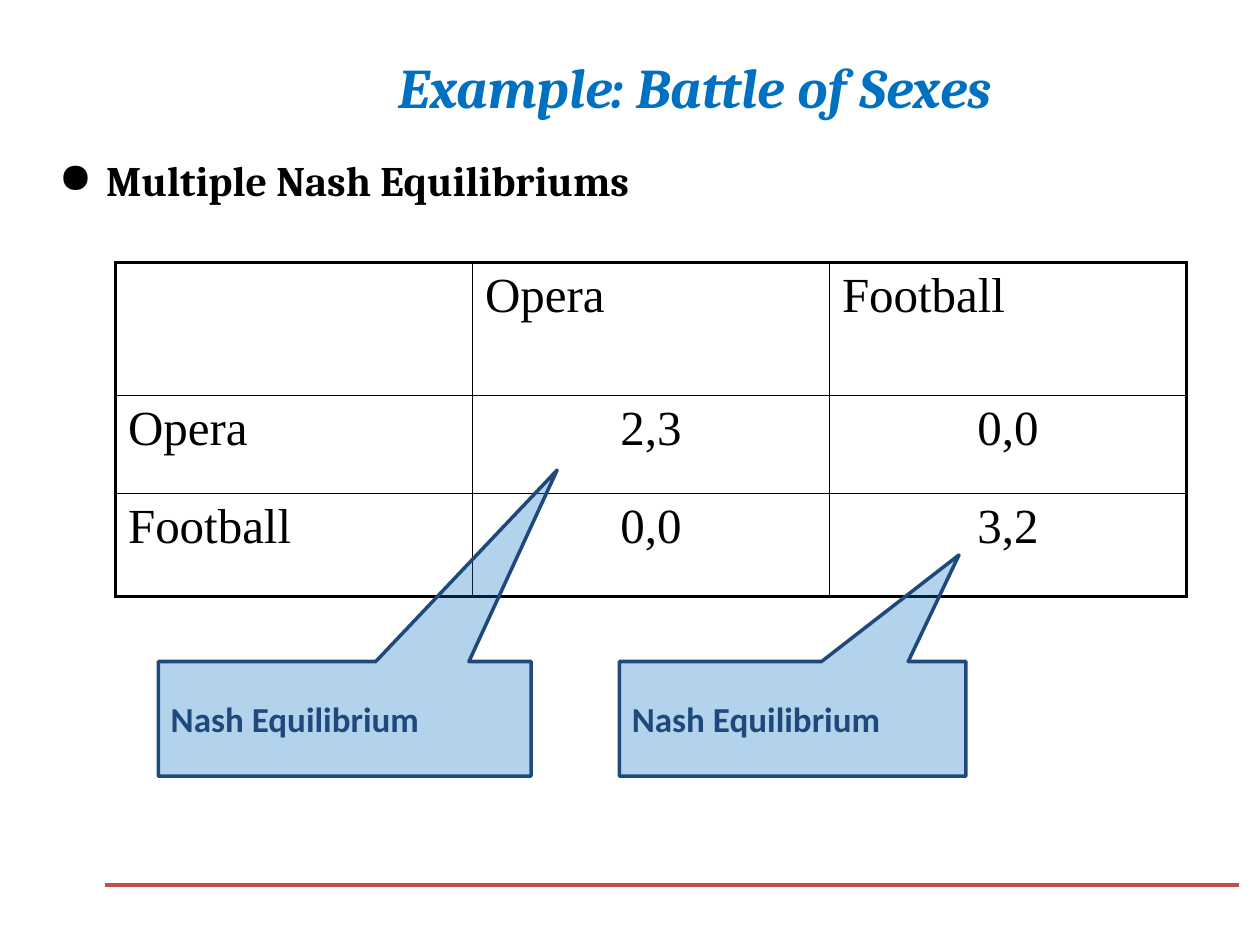
import pptx
import pptx.dml.color
import pptx.enum.shapes
import pptx.enum.text
import pptx.oxml
import pptx.oxml.ns
import pptx.util
from dataclasses import dataclass

Pt = pptx.util.Pt
qn = pptx.oxml.ns.qn
ALIGN = pptx.enum.text.PP_ALIGN
ANCHOR = pptx.enum.text.MSO_ANCHOR


@dataclass(frozen=True)
class Theme:
    blue: str = "0070C0"
    navy: str = "1F497D"
    black: str = "000000"
    red: str = "C0504D"
    heading_font: str = "Cambria"
    table_font: str = "Times New Roman"
    label_font: str = "Calibri"
    title_size: int = 32
    bullet_size: int = 24
    table_size: int = 28
    label_size: int = 20


THEME = Theme()


def rgb(value):
    return pptx.dml.color.RGBColor.from_string(value)


def child(parent, tag, **attrs):
    el = parent.makeelement(qn(tag), attrs)
    parent.append(el)
    return el


def write(tf, text, size, font, color, bold=False, italic=False,
          align=ALIGN.LEFT, spacing=None):
    p = tf.paragraphs[0]
    p.alignment = align
    if spacing:
        p.line_spacing = spacing
    r = p.add_run()
    r.text = text
    r.font.size, r.font.name = Pt(size), font
    r.font.bold, r.font.italic = bold, italic
    r.font.color.rgb = rgb(color)
    return p


def add_text(s, x, y, w, h, text, wrap=True, anchor=ANCHOR.TOP, **fmt):
    tf = s.shapes.add_textbox(Pt(x), Pt(y), Pt(w), Pt(h)).text_frame
    tf.word_wrap = wrap
    tf.vertical_anchor = anchor
    return write(tf, text, **fmt)


def add_bullet(p, char, indent):
    pPr = p._p.get_or_add_pPr()
    pPr.set("marL", str(Pt(indent)))
    pPr.set("indent", str(-Pt(indent)))
    child(pPr, "a:buChar", char=char)


def add_rule(s, x1, x2, y):
    line = s.shapes.add_connector(
        pptx.enum.shapes.MSO_CONNECTOR.STRAIGHT, Pt(x1), Pt(y), Pt(x2), Pt(y))
    line.line.color.rgb = rgb(THEME.red)
    line.line.width = Pt(2.25)
    child(line._element.spPr, "a:effectLst")


def set_borders(cell, widths):
    tcPr = cell._tc.get_or_add_tcPr()
    for side, width in zip("LRTB", widths):
        ln = child(tcPr, f"a:ln{side}", w=str(Pt(width)))
        child(child(ln, "a:solidFill"), "a:srgbClr", val=THEME.black)


def add_payoffs(s, x, y, col_width, heights, rows):
    last_row, last_col = len(rows) - 1, len(rows[0]) - 1
    tbl = s.shapes.add_table(
        len(rows), len(rows[0]), Pt(x), Pt(y),
        Pt(col_width * len(rows[0])), Pt(sum(heights))).table
    tbl.first_row = tbl.horz_banding = False
    for col in tbl.columns:
        col.width = Pt(col_width)
    for i, values in enumerate(rows):
        tbl.rows[i].height = Pt(heights[i])
        for j, text in enumerate(values):
            cell = tbl.cell(i, j)
            outer = (j == 0, j == last_col, i == 0, i == last_row)
            set_borders(cell, [2.25 if edge else 1 for edge in outer])
            cell.fill.background()
            if text:
                write(cell.text_frame, text, THEME.table_size,
                      THEME.table_font, THEME.black,
                      align=ALIGN.CENTER if i and j else ALIGN.LEFT)


def add_callout(s, x, y, w, h, text, tip):
    sp = s.shapes.add_shape(
        pptx.enum.shapes.MSO_SHAPE.RECTANGULAR_CALLOUT,
        Pt(x), Pt(y), Pt(w), Pt(h))
    sp.adjustments[0], sp.adjustments[1] = tip
    sp.shadow.inherit = False
    sp.fill.solid()
    sp.fill.fore_color.rgb = rgb(THEME.blue)
    color = sp._element.spPr.find(qn("a:solidFill"))[0]
    child(color, "a:alpha", val="30000")
    sp.line.color.rgb = rgb(THEME.navy)
    sp.line.width = Pt(2)
    sp.text_frame.word_wrap = True
    sp.text_frame.vertical_anchor = ANCHOR.MIDDLE
    write(sp.text_frame, text, THEME.label_size, THEME.label_font,
          THEME.navy, bold=True)


def main():
    prs = pptx.Presentation()
    prs.slide_width, prs.slide_height = Pt(720), Pt(540)
    s = prs.slides.add_slide(prs.slide_layouts[6])

    add_rule(s, 60, 708, 505.5)
    add_text(s, 90.5, 16.5, 613.5, 55.5, "Example: Battle of Sexes",
             anchor=ANCHOR.BOTTOM, size=THEME.title_size,
             font=THEME.heading_font, color=THEME.blue, bold=True,
             italic=True, align=ALIGN.CENTER, spacing=0.85)
    add_payoffs(s, 66, 150, 204, [76, 56, 59], [
        ["", "Opera", "Football"],
        ["Opera", "2,3", "0,0"],
        ["Football", "0,0", "3,2"],
    ])
    p = add_text(s, 26.5, 85, 347, 36, "Multiple Nash Equilibriums",
                 wrap=False, size=THEME.bullet_size,
                 font=THEME.heading_font, color=THEME.black, bold=True)
    add_bullet(p, "●", 27)
    for x, w, tip in [(354, 198, (0.48, -1.43)), (90.5, 213, (0.57, -2.17))]:
        add_callout(s, x, 378, w, 65.5, "Nash Equilibrium", tip)

    prs.save("out.pptx")


if __name__ == "__main__":
    main()
